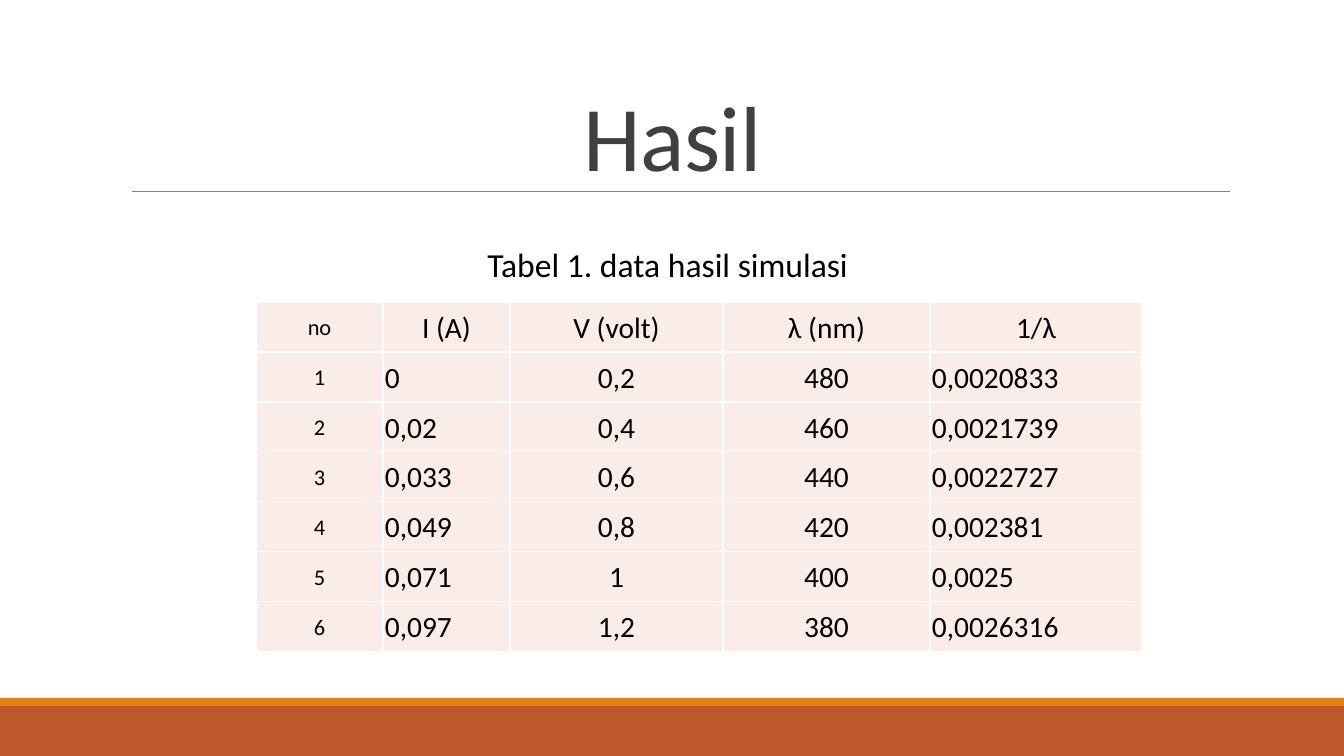
"""Build the "Hasil" slide: a title over a table of simulation data."""
from lxml import etree
from pptx import Presentation
from pptx import util as u
from pptx.dml.color import RGBColor
from pptx.enum import shapes, text
from pptx.oxml import ns

PX = 914400 / 100.8
CENTER, LEFT = text.PP_ALIGN.CENTER, text.PP_ALIGN.LEFT


def px(*lengths):
    return [u.Emu(round(n * PX)) for n in lengths]


def style(p, size, color="000000", align=CENTER):
    p.alignment = align
    p.font.name, p.font.size = "Calibri", u.Pt(size)
    p.font.color.rgb = RGBColor.from_string(color)


prs = Presentation()
prs.slide_width, prs.slide_height = px(1344, 756)
s = prs.slides.add_slide(prs.slide_layouts[5])

for top, height, color in [(706, 50, "BD582C"), (698, 8, "E48312")]:
    sp = s.shapes.add_shape(shapes.MSO_SHAPE.RECTANGLE, *px(0, top, 1344, height))
    sp.shadow.inherit = False
    sp.fill.solid()
    sp.fill.fore_color.rgb = RGBColor.from_string(color)
    sp.line.fill.background()

rule = s.shapes.add_connector(shapes.MSO_CONNECTOR.STRAIGHT, *px(132, 191, 1230, 191))
rule.line.color.rgb = RGBColor.from_string("808080")
rule.line.width = u.Pt(0.5)
etree.SubElement(rule._element.spPr, ns.qn("a:effectLst"))

title = s.shapes.title
title.left, title.top, title.width, title.height = px(118, 35, 1109, 160)
tf = title.text_frame
tf.text = "Hasil"
tf.auto_size = text.MSO_AUTO_SIZE.NONE
tf.vertical_anchor = text.MSO_ANCHOR.BOTTOM
p = tf.paragraphs[0]
style(p, 66, "404040")
p.line_spacing = 0.85
p.runs[0]._r.get_or_add_rPr().set("spc", "-50")

rows = [
    ("no", "I (A)", "V (volt)", "λ (nm)", "1/λ"),
    ("1", "0", "0,2", "480", "0,0020833"),
    ("2", "0,02", "0,4", "460", "0,0021739"),
    ("3", "0,033", "0,6", "440", "0,0022727"),
    ("4", "0,049", "0,8", "420", "0,002381"),
    ("5", "0,071", "1", "400", "0,0025"),
    ("6", "0,097", "1,2", "380", "0,0026316"),
]
col_widths = [127, 127, 213, 207, 212]
row_height = 50
table = s.shapes.add_table(
    len(rows), len(col_widths), *px(256, 302, sum(col_widths), row_height * len(rows))
).table
for column, width in zip(table.columns, px(*col_widths)):
    column.width = width

for i, row in enumerate(rows):
    for j, value in enumerate(row):
        cell = table.cell(i, j)
        cell.text = value
        cell.vertical_anchor = text.MSO_ANCHOR.MIDDLE
        cell.margin_left, cell.margin_top, cell.margin_right, cell.margin_bottom = px(2, 2, 2, 0)
        align = LEFT if i > 0 and j in (1, 4) else CENTER
        style(cell.text_frame.paragraphs[0], 16 if j == 0 else 21, align=align)
        tcPr = cell._tc.get_or_add_tcPr()
        for side in ("a:lnL", "a:lnR", "a:lnT", "a:lnB"):
            ln = etree.SubElement(tcPr, ns.qn(side), w=str(u.Pt(1)))
            fill = etree.SubElement(ln, ns.qn("a:solidFill"))
            etree.SubElement(fill, ns.qn("a:srgbClr"), val="FFFFFF")
        cell.fill.solid()
        cell.fill.fore_color.rgb = RGBColor.from_string("FAEDE7")

caption = s.shapes.add_textbox(*px(416, 239, 511, 50))
tf = caption.text_frame
tf.word_wrap = True
tf.auto_size = text.MSO_AUTO_SIZE.SHAPE_TO_FIT_TEXT
tf.text = "Tabel 1. data hasil simulasi "
style(tf.paragraphs[0], 24)

prs.save("out.pptx")
